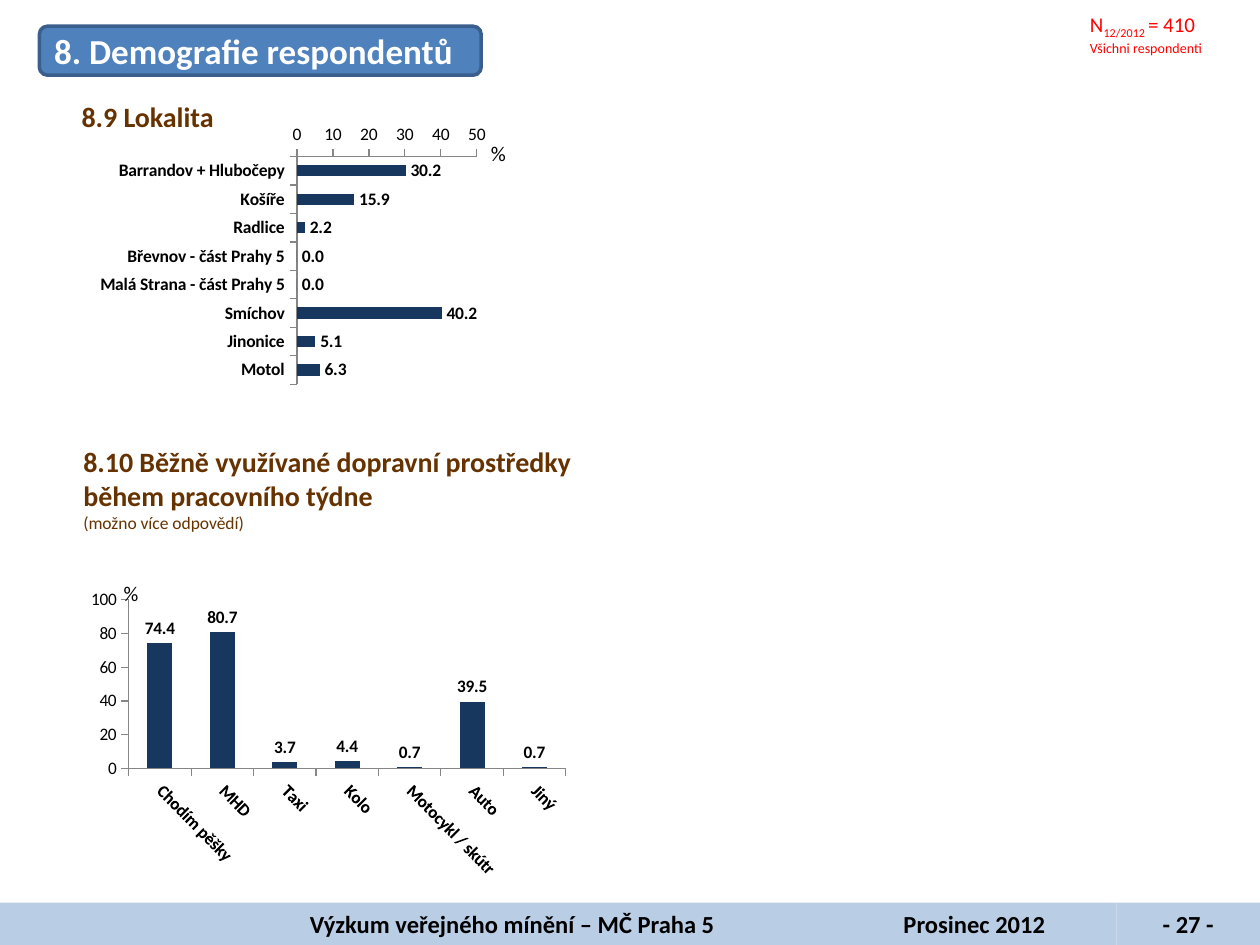
from pptx import Presentation
from pptx.chart.data import CategoryChartData
from pptx.dml.color import RGBColor
from pptx.enum.chart import XL_CHART_TYPE, XL_LABEL_POSITION, XL_TICK_MARK
from pptx.enum.shapes import MSO_SHAPE
from pptx.enum.text import MSO_ANCHOR, MSO_AUTO_SIZE, PP_ALIGN
from pptx.oxml import parse_xml
from pptx.oxml.ns import nsdecls, qn
from pptx.util import Pt

BAR, COLUMN = XL_CHART_TYPE.BAR_CLUSTERED, XL_CHART_TYPE.COLUMN_CLUSTERED
OUTSIDE_END, TICK_OUT = XL_LABEL_POSITION.OUTSIDE_END, XL_TICK_MARK.OUTSIDE
RECT, ROUNDED = MSO_SHAPE.RECTANGLE, MSO_SHAPE.ROUNDED_RECTANGLE
LEFT, CENTER = PP_ALIGN.LEFT, PP_ALIGN.CENTER
TOP, MIDDLE = MSO_ANCHOR.TOP, MSO_ANCHOR.MIDDLE
GROW = MSO_AUTO_SIZE.SHAPE_TO_FIT_TEXT

FONT = "Calibri"
COLORS = {
    "footer": "B9CDE5", "banner": "4F81BD", "banner_line": "3A5F8C",
    "heading": "663300", "bars": "17375E", "axis": "868686",
    "sample": "FF0000", "black": "000000", "white": "FFFFFF",
}


def rgb(name):
    return RGBColor.from_string(COLORS[name])


def style_font(font, size, color="black", bold=False):
    font.name, font.size, font.bold = FONT, Pt(size), bold
    font.color.rgb = rgb(color)


def add_run(paragraph, text, size, color, bold=False, baseline=0):
    run = paragraph.add_run()
    run.text = text
    style_font(run.font, size, color, bold)
    if baseline:
        run._r.get_or_add_rPr().set("baseline", str(baseline * 1000))


def add_panel(slide, kind, box, fill, text, size, color, align, anchor,
              line=None, indent=7.2):
    panel = slide.shapes.add_shape(kind, *map(Pt, box))
    panel.shadow.inherit = False
    panel.fill.solid()
    panel.fill.fore_color.rgb = rgb(fill)
    if line:
        panel.line.color.rgb = rgb(line)
        panel.line.width = Pt(2)
    else:
        panel.line.fill.background()
    frame = panel.text_frame
    frame.word_wrap = True
    frame.vertical_anchor = anchor
    frame.margin_left = Pt(indent)
    paragraph = frame.paragraphs[0]
    paragraph.alignment = align
    add_run(paragraph, text, size, color, True)


def add_text(slide, box, lines, color, inset=None):
    """Each line is a list of (text, size, bold, baseline) runs."""
    frame = slide.shapes.add_textbox(*map(Pt, box)).text_frame
    frame.word_wrap = True
    frame.auto_size = GROW
    if inset is not None:
        frame.margin_left = frame.margin_right = Pt(inset)
        frame.margin_top = frame.margin_bottom = Pt(inset)
    for i, runs in enumerate(lines):
        paragraph = frame.add_paragraph() if i else frame.paragraphs[0]
        for text, size, bold, baseline in runs:
            add_run(paragraph, text, size, color, bold, baseline)


def set_layout(parent, index, x, y, size=None):
    """Place a chart part by fractions of the chart area."""
    for old in parent.findall(qn("c:layout")):
        parent.remove(old)
    target = '<c:layoutTarget val="inner"/>' if size else ""
    extent = '<c:w val="%s"/><c:h val="%s"/>' % size if size else ""
    parent.insert(index, parse_xml(
        f'<c:layout {nsdecls("c")}><c:manualLayout>{target}'
        f'<c:xMode val="edge"/><c:yMode val="edge"/>'
        f'<c:x val="{x}"/><c:y val="{y}"/>{extent}'
        f'</c:manualLayout></c:layout>'))


def add_percent_chart(slide, kind, box, shares, top, step, plot, unit_at):
    data = CategoryChartData(number_format="0.0")
    data.categories = list(shares)
    data.add_series("%", list(shares.values()))
    chart = slide.shapes.add_chart(kind, *map(Pt, box), data).chart
    style_font(chart.font, 18)
    chart.has_legend = False

    # Unit mark
    chart.has_title = True
    unit = chart.chart_title
    add_run(unit.text_frame.paragraphs[0], "%", 12, "black")
    set_layout(unit._element, 1, *unit_at)
    unit._element.find(qn("c:overlay")).set("val", "1")
    set_layout(chart._chartSpace.chart.plotArea, 0, *plot)

    # Axes
    categories, values = chart.category_axis, chart.value_axis
    for axis in (categories, values):
        axis.has_major_gridlines = False
        axis.major_tick_mark = TICK_OUT
        axis.format.line.color.rgb = rgb("axis")
        axis.format.line.width = Pt(0.75)
        style_font(axis.tick_labels.font, 10, bold=axis is categories)
    values.minimum_scale, values.maximum_scale = 0, top
    values.major_unit = step
    values.tick_labels.number_format = "0"
    values.tick_labels.number_format_is_linked = False
    if kind == BAR:
        categories.reverse_order = True
    else:
        body = categories._element.find(qn("c:txPr")).find(qn("a:bodyPr"))
        body.set("rot", "2700000")

    # Bars and their labels
    bars = chart.plots[0]
    bars.gap_width = 150
    bars.vary_by_categories = False
    fill = bars.series[0].format.fill
    fill.solid()
    fill.fore_color.rgb = rgb("bars")
    bars.has_data_labels = True
    labels = bars.data_labels
    labels.show_value = True
    labels.number_format = "0.0"
    labels.number_format_is_linked = False
    labels.position = OUTSIDE_END
    style_font(labels.font, 10, bold=True)


def main():
    prs = Presentation()
    prs.slide_width, prs.slide_height = Pt(720), Pt(540)
    slide = prs.slides.add_slide(prs.slide_layouts[6])

    # Footer band
    left = 0
    for text, width, indent in (
            ("Výzkum veřejného mínění – MČ Praha 5", 475.5, 117),
            ("Prosinec 2012", 162.5, 7.2), ("- 27 -", 82, 7.2)):
        add_panel(slide, RECT, (left, 515.75, width, 24.25), "footer", text,
                  14, "black", CENTER, TOP, indent=indent)
        left += width

    # Locality
    locality = {
        "Barrandov + Hlubočepy": 30.2, "Košíře": 15.9, "Radlice": 2.2,
        "Břevnov - část Prahy 5": 0, "Malá Strana - část Prahy 5": 0,
        "Smíchov": 40.2, "Jinonice": 5.1, "Motol": 6.3,
    }
    add_percent_chart(slide, BAR, (25, 54.5, 364.5, 176), locality, 50, 10,
                      (0.397, 0.199, (0.282, 0.739)), (0.695, 0.13))
    add_text(slide, (39.5, 53.5, 170.5, 26.5),
             [[("8.9 Lokalita", 16, True, 0)]], "heading")

    # Means of transport
    add_text(slide, (40.5, 250.5, 294.5, 58.5), [
        [("8.10 Běžně využívané dopravní prostředky během pracovního týdne",
          16, True, 0)],
        [("(možno více odpovědí)", 10, False, 0)]], "heading")
    transport = {
        "Chodím pěšky": 74.4, "MHD": 80.7, "Taxi": 3.7, "Kolo": 4.4,
        "Motocykl / skútr": 0.7, "Auto": 39.5, "Jiný": 0.7,
    }
    add_percent_chart(slide, COLUMN, (52, 309.5, 286, 193), transport, 100, 20,
                      (0.061, 0.172, (0.887, 0.5)), (0.043, 0.1))

    # Section banner and sample size
    add_panel(slide, ROUNDED, (22.5, 15, 252.5, 28), "banner",
              "8. Demografie respondentů", 20, "white", LEFT, MIDDLE,
              line="banner_line")
    add_text(slide, (620, 3.6, 97, 30), [
        [("N", 12, False, 0), ("12/2012 ", 12, False, -25),
         ("= 410", 12, False, 0)],
        [("Všichni respondenti", 8, False, 0)]], "sample", inset=2.9)

    prs.save("out.pptx")


if __name__ == "__main__":
    main()
